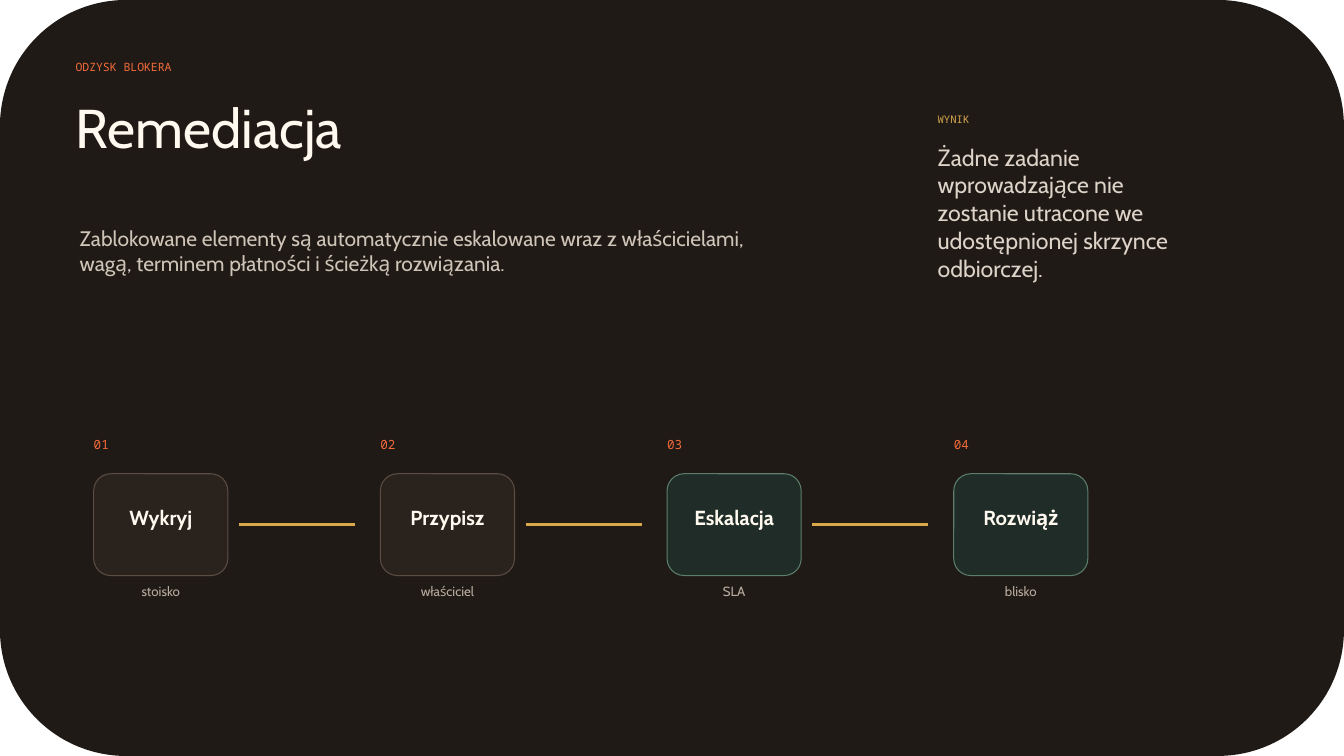
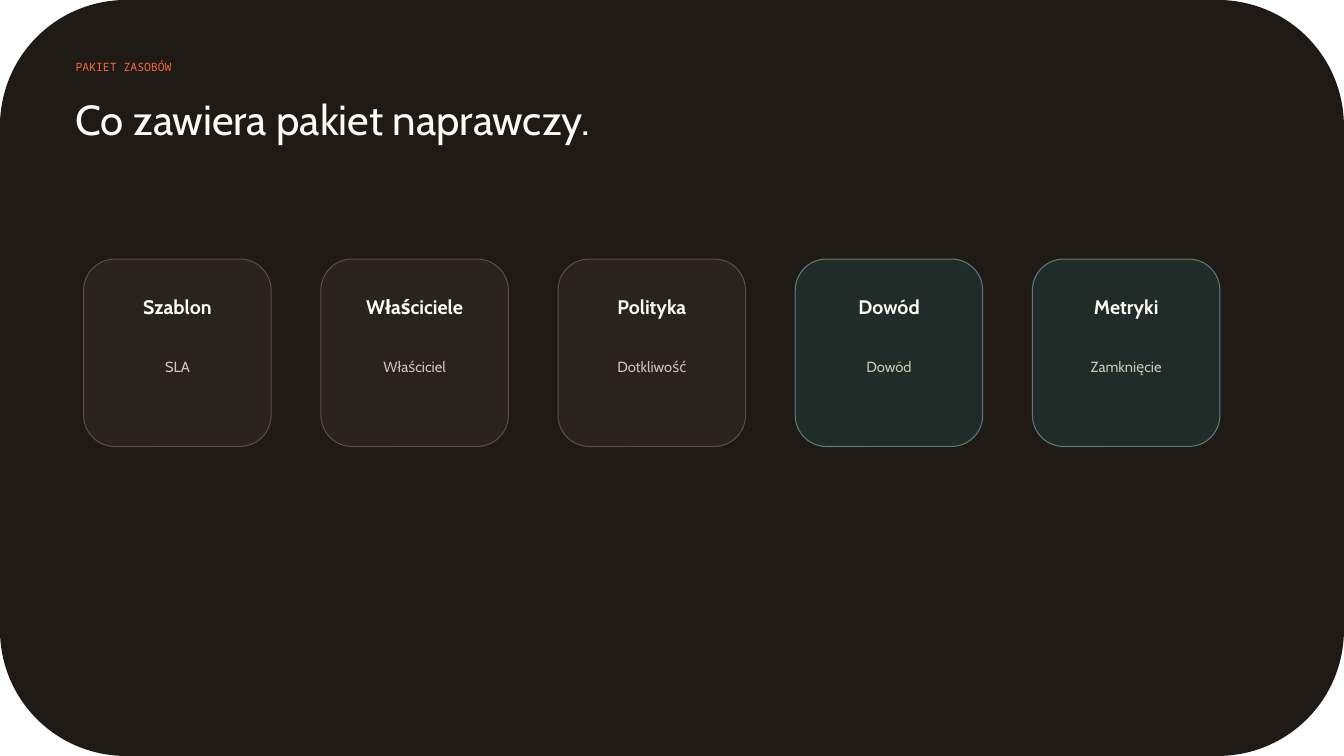
from dataclasses import dataclass

from lxml import etree
from pptx import Presentation
from pptx import util as u
from pptx.dml.color import RGBColor
from pptx.enum import shapes, text
from pptx.oxml.ns import qn


@dataclass(frozen=True)
class Style:
    size: float
    color: str
    font: str = "Cabin"
    bold: bool = False
    centred: bool = False


@dataclass(frozen=True)
class Theme:
    mono = "Noto Sans Mono"
    panel = "201A16"
    gold = "D8A84B"
    warm = ("2A221D", "5B4D44")  # fill, outline
    green = ("1F2C27", "5C7E6B")
    outline_width = 0.75
    link_width = 2.25
    kicker = Style(8.2, "F26B3A", mono)
    big_title = Style(39, "FFF9EF")
    title = Style(30, "FFF9EF")
    lead = Style(15, "CFC4B8")
    result_label = Style(7.5, "D6A84F", mono)
    result = Style(16.5, "DDD3C8")
    number = Style(9, "F26B3A", mono)
    step_name = Style(14.5, "FFF9EF", bold=True, centred=True)
    step_note = Style(9.5, "B9ACA0", centred=True)
    card_name = Style(14, "FFF9EF", bold=True, centred=True)
    card_note = Style(10.5, "CFC4B8", centred=True)


THEME = Theme()
WIDTH, HEIGHT = 13.33, 7.5
STEP_TOP, STEP_WIDTH, STEP_HEIGHT = 4.7, 1.33, 1.01
NOTE_GAP = 0.08
CARD_SIDE = 1.86

RECOVERY = {
    "kicker": "ODZYSK BLOKERA",
    "title": "Remediacja",
    "lead": "Zablokowane elementy są automatycznie eskalowane wraz z właścicielami, "
            "wagą, terminem płatności i ścieżką rozwiązania.",
    "result_label": "WYNIK",
    "result": "Żadne zadanie wprowadzające nie zostanie utracone we "
              "udostępnionej skrzynce odbiorczej.",
    "steps": [
        ("Wykryj", "stoisko", THEME.warm),
        ("Przypisz", "właściciel", THEME.warm),
        ("Eskalacja", "SLA", THEME.green),
        ("Rozwiąż", "blisko", THEME.green),
    ],
}
RESOURCES = {
    "kicker": "PAKIET ZASOBÓW",
    "title": "Co zawiera pakiet naprawczy.",
    "cards": [
        ("Szablon", "SLA", THEME.warm),
        ("Właściciele", "Właściciel", THEME.warm),
        ("Polityka", "Dotkliwość", THEME.warm),
        ("Dowód", "Dowód", THEME.green),
        ("Metryki", "Zamknięcie", THEME.green),
    ],
}


def rgb(color):
    return RGBColor.from_string(color)


def inches(*lengths):
    return [u.Inches(length) for length in lengths]


def spread(first, last, count):
    """Evenly spaced left edges from first to last."""
    return [first + (last - first) * i / (count - 1) for i in range(count)]


def write(box, words, style):
    frame = box.text_frame
    frame.word_wrap = True
    frame.auto_size = text.MSO_AUTO_SIZE.NONE
    frame.vertical_anchor = text.MSO_ANCHOR.TOP
    frame.margin_left = frame.margin_top = frame.margin_right = frame.margin_bottom = 0
    para = frame.paragraphs[0]
    para.alignment = text.PP_ALIGN.CENTER if style.centred else text.PP_ALIGN.LEFT
    span = para.add_run()
    span.text = words
    span.font.name = style.font
    span.font.size = u.Pt(style.size)
    span.font.bold = style.bold
    span.font.color.rgb = rgb(style.color)


def add_text(slide, at, words, style):
    write(slide.shapes.add_textbox(*inches(*at)), words, style)


def add_centred(slide, left, outer_width, top, size, words, style):
    """Add text centred across a box that starts at left."""
    width, height = size
    add_text(slide, (left + (outer_width - width) / 2, top, width, height), words, style)


def add_rounded(slide, at, fill, outline=None):
    box = slide.shapes.add_shape(shapes.MSO_SHAPE.ROUNDED_RECTANGLE, *inches(*at))
    box.shadow.inherit = False
    box.fill.solid()
    box.fill.fore_color.rgb = rgb(fill)
    if outline:
        box.line.color.rgb = rgb(outline)
        box.line.width = u.Pt(THEME.outline_width)
    else:
        box.line.fill.background()
    return box


def add_link(slide, left, right, y):
    link = slide.shapes.add_connector(
        shapes.MSO_CONNECTOR.STRAIGHT, *inches(left, y, right, y))
    link.line.color.rgb = rgb(THEME.gold)
    link.line.width = u.Pt(THEME.link_width)
    etree.SubElement(link._element.spPr, qn("a:effectLst"))


def add_slide(deck, content, title_style, title_height):
    """Start a slide with the dark panel, kicker and title."""
    slide = deck.slides.add_slide(deck.slide_layouts.get_by_name("Title Only"))
    panel = add_rounded(slide, (0, 0, WIDTH, HEIGHT), THEME.panel)
    title = slide.shapes.title
    title._element.addprevious(panel._element)
    title.left, title.top, title.width, title.height = inches(
        0.75, 0.93, 8.31, title_height)
    write(title, content["title"], title_style)
    add_text(slide, (0.75, 0.6, 4.59, 0.28), content["kicker"], THEME.kicker)
    return slide


def build_recovery(deck):
    slide = add_slide(deck, RECOVERY, THEME.big_title, 0.98)
    add_text(slide, (0.79, 2.24, 6.78, 0.66), RECOVERY["lead"], THEME.lead)
    add_text(slide, (9.3, 1.12, 1.2, 0.2), RECOVERY["result_label"], THEME.result_label)
    add_text(slide, (9.3, 1.42, 2.68, 1.42), RECOVERY["result"], THEME.result)

    steps = RECOVERY["steps"]
    lefts = spread(0.93, 9.46, len(steps))
    note_top = STEP_TOP + STEP_HEIGHT + NOTE_GAP
    for i, (left, (name, note, colors)) in enumerate(zip(lefts, steps), 1):
        add_text(slide, (left, 4.33, 0.57, 0.24), f"{i:02}", THEME.number)
        add_rounded(slide, (left, STEP_TOP, STEP_WIDTH, STEP_HEIGHT), *colors)
        add_centred(slide, left, STEP_WIDTH, 5.01, (1.07, 0.28), name, THEME.step_name)
        add_centred(slide, left, STEP_WIDTH, note_top, (1.16, 0.24), note, THEME.step_note)
        if i < len(steps):
            add_link(slide, left + 1.44, left + 2.59, STEP_TOP + STEP_HEIGHT / 2)


def build_resources(deck):
    slide = add_slide(deck, RESOURCES, THEME.title, 0.71)
    cards = RESOURCES["cards"]
    lefts = spread(0.83, 10.24, len(cards))
    for left, (name, note, colors) in zip(lefts, cards):
        add_rounded(slide, (left, 2.57, CARD_SIDE, CARD_SIDE), *colors)
        add_centred(slide, left, CARD_SIDE, 2.93, (1.49, 0.33), name, THEME.card_name)
        add_centred(slide, left, CARD_SIDE, 3.55, (1.55, 0.57), note, THEME.card_note)


def main():
    deck = Presentation()
    deck.slide_width, deck.slide_height = inches(WIDTH, HEIGHT)
    build_recovery(deck)
    build_resources(deck)
    deck.save("out.pptx")


if __name__ == "__main__":
    main()
